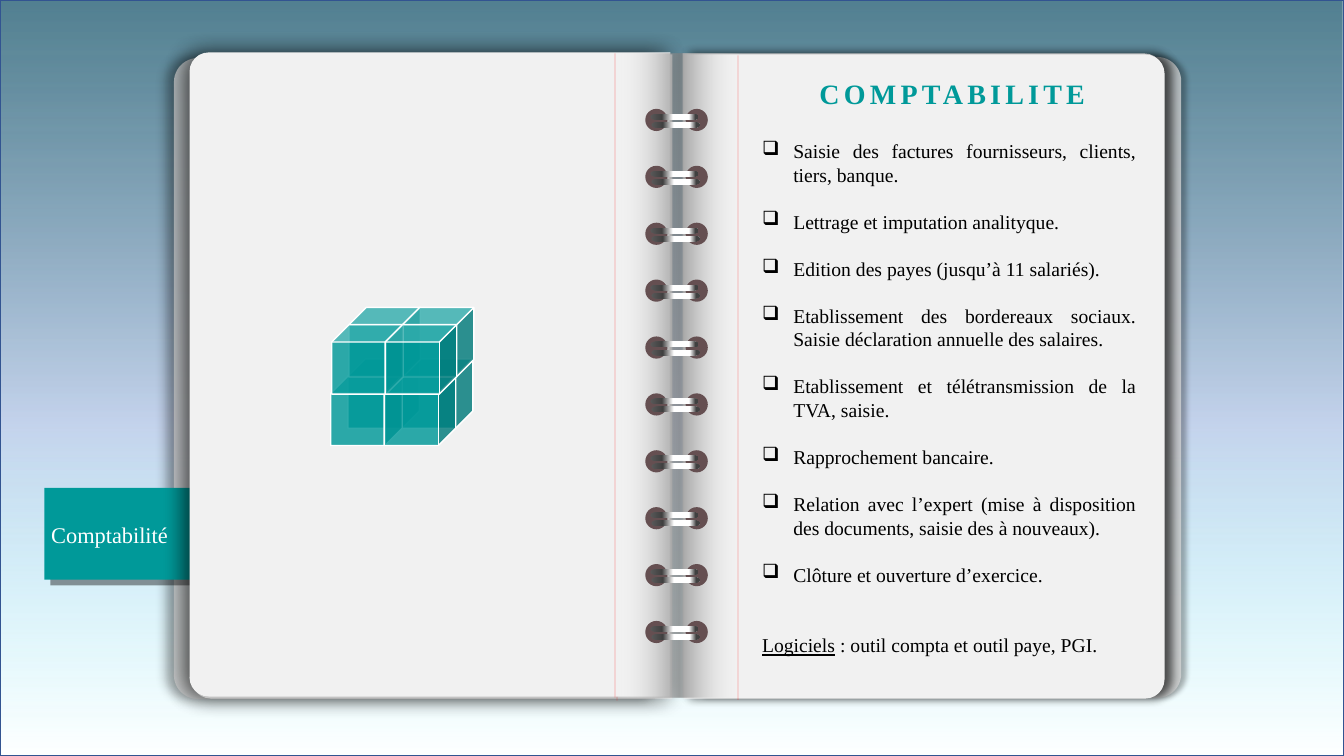
"""Build the accounting slide: an open spiral notebook with a tab, a cube and a task list."""
from lxml.etree import SubElement
from pptx import Presentation
from pptx.dml.color import RGBColor
from pptx.enum.shapes import MSO_CONNECTOR, MSO_SHAPE
from pptx.enum.text import MSO_ANCHOR, MSO_AUTO_SIZE, PP_ALIGN
from pptx.oxml.ns import qn
from pptx.util import Inches, Pt

TEAL = RGBColor(0x00, 0x99, 0x99)
WHITE = RGBColor(0xFF, 0xFF, 0xFF)
BLACK = RGBColor(0x00, 0x00, 0x00)
PAPER = RGBColor(0xF1, 0xF1, 0xF1)
BACK_SHEET = RGBColor(0xD9, 0xD9, 0xD9)
MARGIN_RED = RGBColor(0xFF, 0x50, 0x50)
HOLE = RGBColor(0x65, 0x4F, 0x51)
SKY_DEEP = RGBColor(0x00, 0x44, 0x5C)
SKY_MID = RGBColor(0xB4, 0xC7, 0xE7)
SKY_PALE = RGBColor(0x88, 0xEF, 0xFA)
SKY_EDGE = RGBColor(0x32, 0x54, 0x91)
SPINE_GREY = RGBColor(0x80, 0x80, 0x80)
WIRE_GREY = RGBColor(0x59, 0x59, 0x59)
WIRE_DARK = RGBColor(0x40, 0x40, 0x40)
FONT = "Times New Roman"

SKY = [(0, SKY_DEEP, 67), (56, SKY_MID, 78), (100, SKY_PALE, 0)]
SPINE = [(0, WHITE, 0), (50, SPINE_GREY, 73), (100, WHITE, 0)]
WIRE = [(0, WIRE_GREY, 100), (24, WIRE_DARK, 100), (47, WHITE, 100),
        (80, WHITE, 100), (93, WIRE_DARK, 100)]
TASKS = [
    "Saisie des factures fournisseurs, clients, tiers, banque.",
    "Lettrage et imputation analityque.",
    "Edition des payes (jusqu’à 11 salariés).",
    "Etablissement des bordereaux sociaux. Saisie déclaration annuelle des salaires.",
    "Etablissement et télétransmission de la TVA, saisie.",
    "Rapprochement bancaire.",
    "Relation avec l’expert (mise à disposition des documents, saisie des à nouveaux).",
    "Clôture et ouverture d’exercice.",
]

prs = Presentation()
prs.slide_width, prs.slide_height = Inches(13.33), Inches(7.5)
slide = prs.slides.add_slide(prs.slide_layouts[5])
shapes = slide.shapes


def add_part(kind, box, color, alpha=100, edge=None, shadow=None):
    """Add a solid shape; shadow is (blur pt, distance pt, direction degrees)."""
    part = shapes.add_shape(kind, *[Inches(v) for v in box])
    part.fill.solid()
    part.fill.fore_color.rgb = color
    properties = part._element.spPr
    if alpha < 100:
        SubElement(properties.find(".//" + qn("a:srgbClr")), qn("a:alpha"), val=str(alpha * 1000))
    if edge is None:
        part.line.fill.background()
    else:
        part.line.color.rgb = edge
        part.line.width = Pt(1)
    part.shadow.inherit = False
    if shadow:
        blur, distance, direction = shadow
        outer = SubElement(properties.find(qn("a:effectLst")), qn("a:outerShdw"),
                           blurRad=str(Pt(blur)), dist=str(Pt(distance)),
                           dir=str(direction * 60000), rotWithShape="0")
        tint = SubElement(outer, qn("a:srgbClr"), val=str(BLACK))
        SubElement(tint, qn("a:alpha"), val="40000")
    return part


def set_gradient(part, stops, angle=0):
    """Fill a shape with (position, colour, alpha) stops."""
    part.fill.gradient()
    part.fill.gradient_angle = angle
    stop_list = part._element.spPr.find(".//" + qn("a:gsLst"))
    for old_stop in list(stop_list):
        stop_list.remove(old_stop)
    for position, color, alpha in stops:
        stop = SubElement(stop_list, qn("a:gs"), pos=str(position * 1000))
        tint = SubElement(stop, qn("a:srgbClr"), val=str(color))
        SubElement(tint, qn("a:alpha"), val=str(alpha * 1000))


sky = add_part(MSO_SHAPE.RECTANGLE, (0, 0, 13.33, 7.5), SKY_MID, edge=SKY_EDGE)
set_gradient(sky, SKY, 270)

left_back = add_part(MSO_SHAPE.ROUND_2_SAME_RECTANGLE, (0.93, 1.37, 6.36, 4.77),
                     BACK_SHEET, 76, shadow=(8, 6, 180))
left_back.rotation = 270
left_back.adjustments[0] = 0.05

add_part(MSO_SHAPE.RECTANGLE, (0.44, 4.84, 1.63, 0.91), TEAL, shadow=(0, 6, 45))
tab_label = shapes.add_textbox(Inches(0.41), Inches(5.12), Inches(1.45), Inches(0.37))
tab_label.text_frame.word_wrap = True
tab_run = tab_label.text_frame.paragraphs[0].add_run()
tab_run.text = "Comptabilité"
tab_run.font.name, tab_run.font.size = FONT, Pt(16)
tab_run.font.color.rgb = WHITE

right_back = add_part(MSO_SHAPE.ROUND_2_SAME_RECTANGLE, (6.15, 1.36, 6.36, 4.77),
                      BACK_SHEET, 76, shadow=(4, 3, 0))
right_back.rotation = 90
right_back.adjustments[0] = 0.05

LEFT_SHADOW, RIGHT_SHADOW = (16, 4, 180), (7, 5, 0)
for left, top, turn, shadow, margin_x, margin_top in [
    (1.09, 1.35, 270, LEFT_SHADOW, 6.12, 0.56),
    (5.96, 1.34, 90, RIGHT_SHADOW, 7.32, 0.55),
    (1.07, 1.33, 270, LEFT_SHADOW, 6.1, 0.53),
    (5.97, 1.35, 90, RIGHT_SHADOW, 7.32, 0.55),
]:
    page = add_part(MSO_SHAPE.ROUND_2_SAME_RECTANGLE, (left, top, 6.39, 4.77), PAPER, shadow=shadow)
    page.rotation = turn
    page.adjustments[0] = 0.04
    margin = shapes.add_connector(MSO_CONNECTOR.STRAIGHT, Inches(margin_x), Inches(margin_top),
                                  Inches(margin_x), Inches(margin_top + 6.39))
    margin.line.color.rgb = MARGIN_RED
    margin.line.width = Pt(0.5)
    margin_properties = margin._element.spPr
    SubElement(margin_properties.find(".//" + qn("a:srgbClr")), qn("a:alpha"), val="50000")
    SubElement(margin_properties, qn("a:effectLst"))

spine = add_part(MSO_SHAPE.RECTANGLE, (6.12, 0.53, 1.23, 6.39), SPINE_GREY)
set_gradient(spine, SPINE)

RING_COUNT, FIRST_RING, LAST_RING = 10, 1.08, 6.16
for ring in range(RING_COUNT):
    ring_top = FIRST_RING + ring * (LAST_RING - FIRST_RING) / (RING_COUNT - 1)
    for hole_left in (6.8, 6.4):
        add_part(MSO_SHAPE.OVAL, (hole_left, ring_top, 0.22, 0.22), HOLE)
    for wire_left, drop in ((6.45, 0.05), (6.46, 0.13)):
        wire = add_part(MSO_SHAPE.FLOWCHART_TERMINATOR,
                        (wire_left, ring_top + drop, 0.48, 0.06), WIRE_GREY)
        set_gradient(wire, WIRE)

title = shapes.title
title.left, title.top, title.width, title.height = [Inches(v) for v in (7.33, 0.54, 4.23, 0.61)]
shapes._spTree.append(title._element)
title.text_frame.auto_size = MSO_AUTO_SIZE.NONE
title.text_frame.vertical_anchor = MSO_ANCHOR.TOP
heading = title.text_frame.paragraphs[0]
heading.alignment = PP_ALIGN.CENTER
heading.line_spacing = 1.5
heading_run = heading.add_run()
heading_run.text = "COMPTABILITE"
heading_run.font.name, heading_run.font.size, heading_run.font.bold = FONT, Pt(20), True
heading_run.font.color.rgb = TEAL
heading_run.font._element.set("spc", "300")

task_list = shapes.add_textbox(Inches(7.46), Inches(1.33), Inches(3.91), Inches(5.64)).text_frame
task_list.word_wrap = True
for number, task in enumerate(TASKS):
    item = task_list.add_paragraph() if number else task_list.paragraphs[0]
    item.alignment = PP_ALIGN.JUSTIFY
    if number:
        item.space_before = Pt(16.8)
    item_properties = item._element.get_or_add_pPr()
    item_properties.set("marL", str(Inches(0.31)))
    item_properties.set("indent", str(-Inches(0.31)))
    SubElement(item_properties, qn("a:buChar"), char="❑")
    item_run = item.add_run()
    item_run.text = task
    item_run.font.name, item_run.font.size = FONT, Pt(14)
    item_run.font.color.rgb = BLACK

software = task_list.add_paragraph()
software.line_spacing = 1.5
software.space_before = Pt(25.2)
for words, underlined in (("Logiciels", True), (" : outil compta et outil paye, PGI.", False)):
    software_run = software.add_run()
    software_run.text = words
    software_run.font.name, software_run.font.size = FONT, Pt(14)
    software_run.font.underline = underlined
    software_run.font.color.rgb = BLACK

for level in range(2):
    for depth in (1, 0):
        for column in range(2):
            cube_left = 3.28 + 0.53 * column + 0.17 * depth + 0.01 * level
            cube_top = 3.73 - 0.17 * depth - 0.51 * level
            add_part(MSO_SHAPE.CUBE, (cube_left, cube_top, 0.71, 0.69), TEAL, 82, edge=WHITE)

prs.save("out.pptx")
